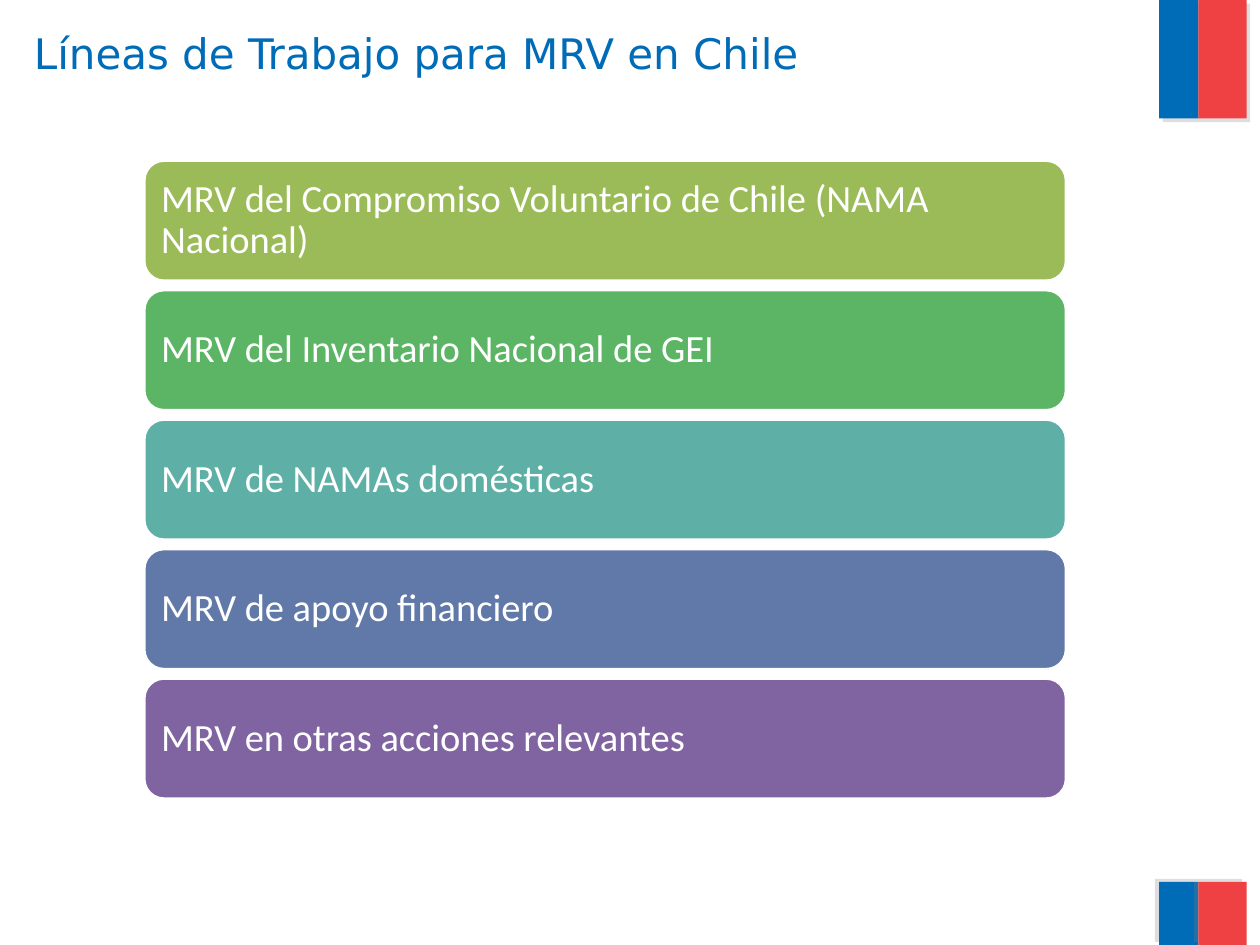
from lxml import etree
from pptx import Presentation
from pptx.dml.color import RGBColor
from pptx.enum.shapes import MSO_SHAPE
from pptx.enum.text import MSO_ANCHOR, MSO_AUTO_SIZE, PP_ALIGN
from pptx.oxml import parse_xml
from pptx.oxml.ns import nsdecls
from pptx.util import Cm, Pt

RECTANGLE = MSO_SHAPE.RECTANGLE
ROUNDED = MSO_SHAPE.ROUNDED_RECTANGLE
TOP, MIDDLE = MSO_ANCHOR.TOP, MSO_ANCHOR.MIDDLE
LEFT = PP_ALIGN.LEFT
NO_AUTOFIT = MSO_AUTO_SIZE.NONE

BLUE = RGBColor(0x00, 0x6C, 0xB7)
RED = RGBColor(0xEF, 0x41, 0x44)
WHITE = RGBColor(0xFF, 0xFF, 0xFF)
OLIVE = RGBColor(0x9B, 0xBB, 0x59)
GREEN = RGBColor(0x5C, 0xB5, 0x65)
TEAL = RGBColor(0x5E, 0xAF, 0xA6)
SLATE = RGBColor(0x61, 0x79, 0xA8)
PURPLE = RGBColor(0x80, 0x64, 0xA2)


def write_text(shape, text, font, size, color, anchor, margin=None, spacing=None):
    frame = shape.text_frame
    frame.word_wrap = True
    frame.auto_size = NO_AUTOFIT
    frame.vertical_anchor = anchor
    if margin is not None:
        frame.margin_left = frame.margin_right = margin
        frame.margin_top = frame.margin_bottom = margin
    paragraph = frame.paragraphs[0]
    paragraph.alignment = LEFT
    paragraph.line_spacing = spacing
    run = paragraph.add_run()
    run.text = text
    run.font.name = font
    run.font.size = Pt(size)
    run.font.color.rgb = color


def cast_shadow(shape, degrees):
    """Give the shape a hard grey shadow falling in the given direction."""
    properties = shape.fill._xPr
    for old in properties.findall("{*}effectLst"):
        properties.remove(old)
    effects = parse_xml(f"<a:effectLst {nsdecls('a')}/>")
    namespace = "{" + effects.nsmap["a"] + "}"
    shadow = etree.SubElement(effects, namespace + "outerShdw", blurRad="0",
                              dist=str(Pt(3)), dir=str(degrees * 60000),
                              algn="ctr", rotWithShape="0")
    grey = etree.SubElement(shadow, namespace + "srgbClr", val="808080")
    etree.SubElement(grey, namespace + "alpha", val="25000")
    properties.append(effects)


prs = Presentation()
prs.slide_width, prs.slide_height = Cm(25.4), Cm(19.05)
slide = prs.slides.add_slide(prs.slide_layouts[5])

# Flag bands in the right-hand corners
for band_top, band_height, shadow_angle in [(0, 2.39, 45), (17.78, 1.27, 215)]:
    for band_left, band_width, color in [(23.37, 0.79, BLUE), (24.16, 0.97, RED)]:
        band = slide.shapes.add_shape(RECTANGLE, Cm(band_left), Cm(band_top),
                                      Cm(band_width), Cm(band_height))
        band.fill.solid()
        band.fill.fore_color.rgb = color
        band.line.fill.background()
        cast_shadow(band, shadow_angle)

title = slide.shapes.title
title.left, title.top = Cm(0.43), Cm(0.43)
title.width, title.height = Cm(22.68), Cm(3.18)
write_text(title, "Líneas de Trabajo para MRV en Chile", "DejaVu Sans", 24, BLUE, TOP)

# Lines of work, one bar each
work_lines = [
    ("MRV del Compromiso Voluntario de Chile (NAMA Nacional)", OLIVE),
    ("MRV del Inventario Nacional de GEI", GREEN),
    ("MRV de NAMAs domésticas", TEAL),
    ("MRV de apoyo financiero", SLATE),
    ("MRV en otras acciones relevantes", PURPLE),
]
FIRST_TOP, BAR_HEIGHT, BAR_PITCH = 3.23, 2.44, 2.61
for index, (work_line, color) in enumerate(work_lines):
    bar = slide.shapes.add_shape(ROUNDED, Cm(2.9), Cm(FIRST_TOP + index * BAR_PITCH),
                                 Cm(18.6), Cm(BAR_HEIGHT))
    bar.shadow.inherit = False
    bar.fill.solid()
    bar.fill.fore_color.rgb = color
    bar.line.color.rgb = WHITE
    bar.line.width = Pt(2)
    write_text(bar, work_line, "Calibri", 22, WHITE, MIDDLE,
               margin=Cm(0.23), spacing=0.9)

prs.save("out.pptx")
